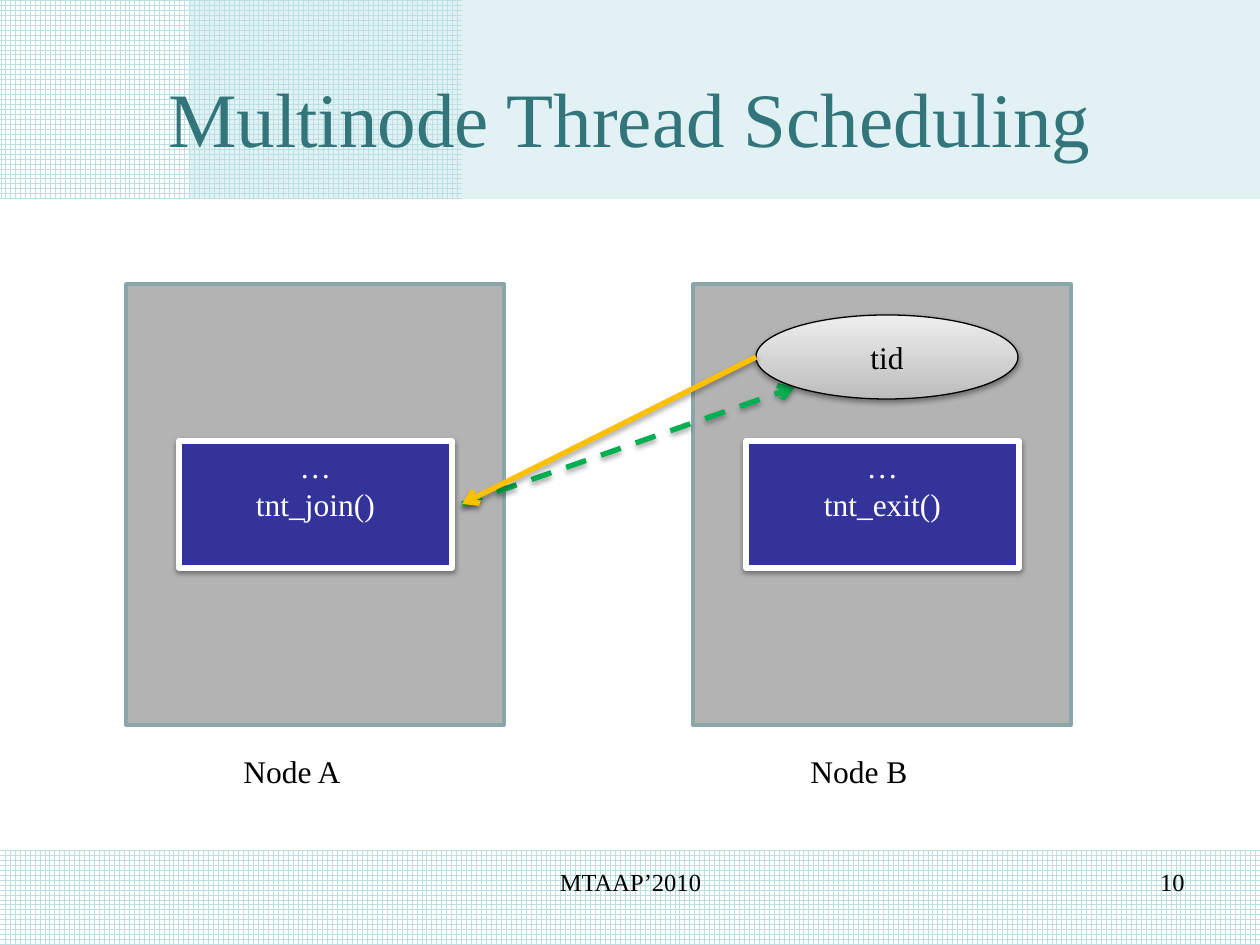
"""Build the Multinode Thread Scheduling slide."""
from lxml.etree import SubElement
from pptx import Presentation
from pptx.dml.color import RGBColor
from pptx.enum.dml import MSO_LINE as Dash, MSO_PATTERN as Pattern
from pptx.enum.shapes import MSO_CONNECTOR as Connector, MSO_SHAPE as Shape
from pptx.enum.text import MSO_ANCHOR as Anchor, PP_ALIGN as Align
from pptx.oxml.ns import qn
from pptx.util import Pt

THEME = {
    "font": "Times New Roman",
    "title_size": 44, "body_size": 18, "footer_size": 14,
    "title": RGBColor(0x32, 0x75, 0x7A),
    "band": RGBColor(0xBB, 0xE0, 0xE3),
    "white": RGBColor(0xFF, 0xFF, 0xFF),
    "black": RGBColor(0, 0, 0),
    "node": RGBColor(0xB3, 0xB3, 0xB3),
    "node_line": RGBColor(0x8A, 0xA6, 0xA8),
    "code": RGBColor(0x33, 0x33, 0x99),
    "tid_dark": RGBColor(0xBD, 0xBD, 0xBD),
    "tid_light": RGBColor(0xEE, 0xEE, 0xEE),
    "request": RGBColor(0x00, 0xB0, 0x50),
    "reply": RGBColor(0xFF, 0xC0, 0x00),
}
SCALE = 914400 / 126


def write_text(shape, lines, size, color, align, anchor=Anchor.TOP, wrap=True):
    frame = shape.text_frame
    frame.text = "\n".join(lines)
    frame.word_wrap = wrap
    frame.vertical_anchor = anchor
    font_format = {"name": THEME["font"], "size": Pt(THEME[size])}
    for paragraph in frame.paragraphs:
        paragraph.alignment = align
        for run in paragraph.runs:
            for name, value in font_format.items():
                setattr(run.font, name, value)
            run.font.color.rgb = THEME[color]


def add_shadow(shape, opacity, distance):
    properties = shape._element.spPr
    for old in properties.findall(qn("a:effectLst")):
        properties.remove(old)
    effects = SubElement(properties, qn("a:effectLst"))
    shadow = SubElement(effects, qn("a:outerShdw"), blurRad="40000",
                        dist=str(distance), dir="5400000", rotWithShape="0")
    color = SubElement(shadow, qn("a:srgbClr"), val="000000")
    SubElement(color, qn("a:alpha"), val=str(opacity * 1000))


presentation = Presentation()
presentation.slide_width = round(1260 * SCALE)
presentation.slide_height = round(945 * SCALE)
slide = presentation.slides.add_slide(presentation.slide_layouts[5])
shapes = slide.shapes
title = shapes.title

for box, patterned in [((0, 850, 1260, 95), True),
                       ((0, 0, 462, 199), True),
                       ((189, 0, 1071, 199), False)]:
    band = shapes.add_shape(Shape.FLOWCHART_PROCESS, *(round(v * SCALE) for v in box))
    band.shadow.inherit = False
    band.line.fill.background()
    if patterned:
        band.fill.patterned()
        band.fill.pattern = Pattern.LARGE_GRID
        band.fill.fore_color.rgb = THEME["band"]
        band.fill.back_color.rgb = THEME["white"]
    else:
        band.fill.solid()
        band.fill.fore_color.rgb = THEME["band"]
        color = band._element.spPr.find(qn("a:solidFill"))[0]
        SubElement(color, qn("a:alpha"), val="42000")

shapes._spTree.append(title._element)
for name, value in {"left": 63, "top": 38, "width": 1134, "height": 158}.items():
    setattr(title, name, round(value * SCALE))
write_text(title, ["Multinode Thread Scheduling"], "title_size", "title",
           Align.CENTER, Anchor.MIDDLE)

for box, text, align in [((431, 861, 399, 66), "MTAAP’2010", Align.CENTER),
                         ((903, 861, 294, 66), "10", Align.RIGHT)]:
    footer = shapes.add_textbox(*(round(v * SCALE) for v in box))
    write_text(footer, [text], "footer_size", "black", align)

for left, name in [(126, "Node A"), (693, "Node B")]:
    node = shapes.add_shape(Shape.RECTANGLE,
                            *(round(v * SCALE) for v in (left, 284, 378, 441)))
    node.shadow.inherit = False
    node.fill.solid()
    node.fill.fore_color.rgb = THEME["node"]
    node.line.color.rgb = THEME["node_line"]
    node.line.width = Pt(2)
    label = shapes.add_textbox(*(round(v * SCALE) for v in (left + 105, 746, 125, 50)))
    write_text(label, [name], "body_size", "black", Align.LEFT, wrap=False)

arrows = []
for ends, color, dash in [((462, 504, 795, 387), "request", Dash.DASH),
                          ((756, 357, 462, 504), "reply", Dash.SOLID)]:
    arrow = shapes.add_connector(Connector.STRAIGHT, *(round(v * SCALE) for v in ends))
    arrow.line.color.rgb = THEME[color]
    arrow.line.width = Pt(3)
    arrow.line.dash_style = dash
    SubElement(arrow.line._get_or_add_ln(), qn("a:tailEnd"), type="arrow")
    add_shadow(arrow, 35, 23000)
    arrows.append(arrow)

tid = shapes.add_shape(Shape.OVAL, *(round(v * SCALE) for v in (756, 315, 262, 84)))
tid.fill.gradient()
tid.fill.gradient_angle = 90
for stop, color in zip(tid.fill.gradient_stops, ("tid_dark", "tid_light")):
    stop.color.rgb = THEME[color]
tid.line.color.rgb = THEME["black"]
tid.line.width = Pt(0.75)
add_shadow(tid, 38, 20000)
write_text(tid, ["tid"], "body_size", "black", Align.CENTER, Anchor.MIDDLE)

for left, call in [(746, "tnt_exit()"), (179, "tnt_join()")]:
    code = shapes.add_shape(Shape.RECTANGLE,
                            *(round(v * SCALE) for v in (left, 441, 273, 127)))
    code.fill.solid()
    code.fill.fore_color.rgb = THEME["code"]
    code.line.color.rgb = THEME["white"]
    code.line.width = Pt(3)
    add_shadow(code, 38, 20000)
    write_text(code, ["…", call], "body_size", "white", Align.CENTER)

shapes._spTree.append(arrows[1]._element)
presentation.save("out.pptx")
